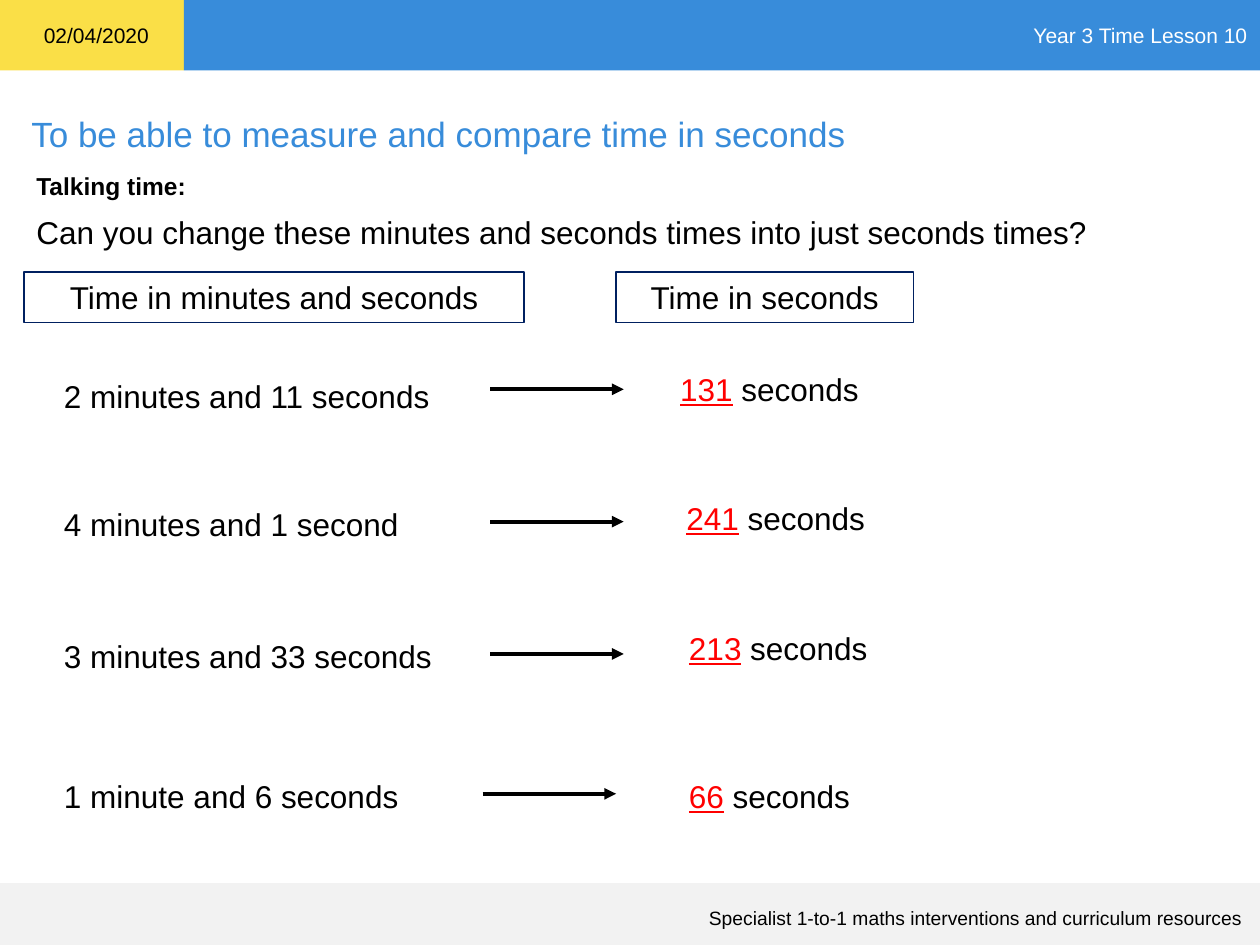
"""Build a lesson slide on changing minutes and seconds into seconds."""
from lxml.etree import SubElement
from pptx import Presentation
from pptx.dml.color import RGBColor
from pptx.enum.shapes import MSO_CONNECTOR, MSO_SHAPE
from pptx.enum.text import MSO_ANCHOR, PP_ALIGN
from pptx.oxml.ns import qn
from pptx.util import Inches, Pt

BLACK = RGBColor(0x00, 0x00, 0x00)
WHITE = RGBColor(0xFF, 0xFF, 0xFF)
RED = RGBColor(0xFF, 0x00, 0x00)
BLUE = RGBColor(0x38, 0x8C, 0xDA)
NAVY = RGBColor(0x00, 0x20, 0x60)
YELLOW = RGBColor(0xFA, 0xDF, 0x47)
GREY = RGBColor(0xF2, 0xF2, 0xF2)

ROWS = [
    ("2 minutes and 11 seconds", 2.94, 3.89, 3.09, "131", 5.3, 2.89),
    ("4 minutes and 1 second", 3.96, 3.89, 4.14, "241", 5.35, 3.91),
    ("3 minutes and 33 seconds", 5.01, 3.89, 5.19, "213", 5.37, 4.94),
    ("1 minute and 6 seconds", 6.12, 3.83, 6.3, "66", 5.37, 6.12),
]


def write(shape, text, size=18, color=BLACK, bold=False, under=False,
          align=PP_ALIGN.LEFT, anchor=MSO_ANCHOR.TOP):
    frame = shape.text_frame
    frame.word_wrap = True
    frame.vertical_anchor = anchor
    para = frame.paragraphs[0]
    para.alignment = align
    run = para.add_run()
    run.text = text
    font = run.font
    font.name = "Arial"
    font.size = Pt(size)
    font.bold = bold
    font.underline = under
    font.color.rgb = color


class Board:
    def __init__(self, slide):
        self.slide = slide
        self.weight = Pt(2.25)

    def rect(self, x, y, w, h, fill=None, line=None):
        box = self.slide.shapes.add_shape(
            MSO_SHAPE.RECTANGLE, Inches(x), Inches(y), Inches(w), Inches(h))
        box.shadow.inherit = False
        if fill is None:
            box.fill.background()
        else:
            box.fill.solid()
            box.fill.fore_color.rgb = fill
        if line is None:
            box.line.fill.background()
        else:
            box.line.color.rgb = line
            box.line.width = Pt(0.75)
        return box

    def label(self, text, x, y, w, h=0.4, **style):
        box = self.slide.shapes.add_textbox(
            Inches(x), Inches(y), Inches(w), Inches(h))
        write(box, text, **style)
        return box

    def arrow(self, x, y, length=1.06):
        link = self.slide.shapes.add_connector(
            MSO_CONNECTOR.STRAIGHT, Inches(x), Inches(y),
            Inches(x + length), Inches(y))
        link.line.color.rgb = BLACK
        link.line.width = self.weight
        SubElement(link.line._get_or_add_ln(), qn("a:tailEnd"), type="triangle")
        SubElement(link._element.spPr, qn("a:effectLst"))


def main():
    deck = Presentation()
    deck.slide_width, deck.slide_height = Inches(10), Inches(7.5)
    board = Board(deck.slides.add_slide(deck.slide_layouts[6]))

    board.rect(0, 0, 1.46, 0.56, YELLOW)
    head = board.rect(1.46, 0, 8.54, 0.56, BLUE)
    write(head, "Year 3 Time Lesson 10", size=12, color=WHITE,
          align=PP_ALIGN.RIGHT, anchor=MSO_ANCHOR.MIDDLE)
    board.label("02/04/2020", 0.25, 0.13, 1.04, 0.3, size=12)
    board.rect(0, 7.01, 10, 0.49, GREY)
    board.label("Specialist 1-to-1 maths interventions and curriculum resources",
                0.42, 7.14, 9.54, 0.28, size=11, align=PP_ALIGN.RIGHT,
                anchor=MSO_ANCHOR.MIDDLE)

    board.label("To be able to measure and compare time in seconds",
                0.15, 0.84, 9.71, 0.44, size=20, color=BLUE)
    board.label("Talking time:", 0.19, 1.31, 1.6, 0.34, size=14, bold=True)
    board.label("Can you change these minutes and seconds times into just "
                "seconds times?", 0.19, 1.64, 9.61)

    for text, x, w in [("Time in minutes and seconds", 0.19, 3.97),
                       ("Time in seconds", 4.89, 2.36)]:
        write(board.rect(x, 2.16, w, 0.4, line=NAVY), text,
              align=PP_ALIGN.CENTER)

    for time, top, start, mid, total, left, level in ROWS:
        board.label(time, 0.41, top, 3.2)
        board.arrow(start, mid)
        reply = board.label(total, left, level, 1.7, color=RED, under=True)
        write(reply, " seconds")

    deck.save("out.pptx")


if __name__ == "__main__":
    main()
